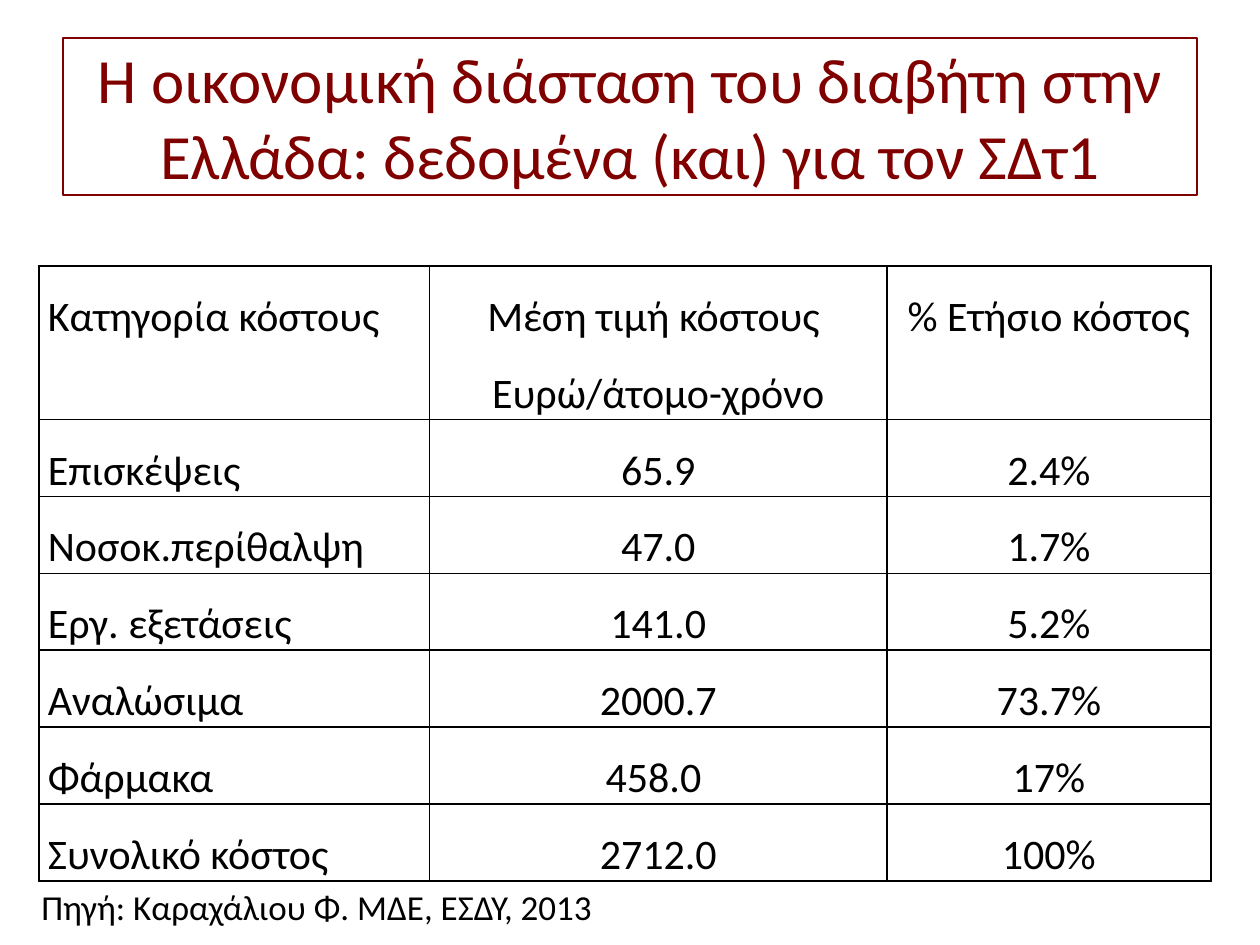
from lxml import etree
from pptx import Presentation
from pptx.dml.color import RGBColor
from pptx.enum.text import MSO_ANCHOR, PP_ALIGN
from pptx.oxml.ns import qn
from pptx.util import Inches, Pt

CENTER, JUSTIFY, LEFT = PP_ALIGN.CENTER, PP_ALIGN.JUSTIFY, PP_ALIGN.LEFT
MIDDLE, TOP = MSO_ANCHOR.MIDDLE, MSO_ANCHOR.TOP
MAROON = RGBColor(0x80, 0x00, 0x00)
BLACK = RGBColor(0x00, 0x00, 0x00)
WHITE = RGBColor(0xFF, 0xFF, 0xFF)
FONT = "Calibri"

TITLE = "Η οικονομική διάσταση του διαβήτη στην Ελλάδα: δεδομένα (και) για τον ΣΔτ1"
SOURCE = "Πηγή: Καραχάλιου Φ. ΜΔΕ, ΕΣΔΥ, 2013"
COSTS = [
    ("Κατηγορία κόστους", "Μέση τιμή κόστους \nΕυρώ/άτομο-χρόνο", "% Ετήσιο κόστος"),
    ("Επισκέψεις", "65.9", "2.4%"),
    ("Νοσοκ.περίθαλψη", "47.0", "1.7%"),
    ("Εργ. εξετάσεις", "141.0", "5.2%"),
    ("Αναλώσιμα", "2000.7", "73.7%"),
    ("Φάρμακα", "458.0 ", "17%"),
    ("Συνολικό κόστος", "2712.0", "100%"),
]
COLUMN_WIDTHS = (3.1, 3.63, 2.57)
LINE_HEIGHT = 0.61


def write(frame, text, size, color=BLACK, align=LEFT, spacing=1.0):
    frame.word_wrap = True
    frame.text = text
    for paragraph in frame.paragraphs:
        paragraph.alignment = align
        paragraph.line_spacing = spacing
        for run in paragraph.runs:
            run.font.name = FONT
            run.font.size = Pt(size)
            run.font.color.rgb = color


def set_borders(cell, color=BLACK, width=1):
    """Draw all four edges; they must come before the fill in the cell XML."""
    properties = cell._tc.get_or_add_tcPr()
    for position, edge in enumerate(("a:lnL", "a:lnR", "a:lnT", "a:lnB")):
        line = etree.Element(qn(edge), w=str(Pt(width)))
        fill = etree.SubElement(line, qn("a:solidFill"))
        etree.SubElement(fill, qn("a:srgbClr"), val=str(color))
        properties.insert(position, line)


def add_title(slide):
    title = slide.shapes.title
    title.left, title.top = Inches(0.5), Inches(0.3)
    title.width, title.height = Inches(9), Inches(1.25)
    title.line.color.rgb = MAROON
    title.line.width = Pt(1.25)
    write(title.text_frame, TITLE, 36, color=MAROON, align=CENTER)
    title.text_frame.vertical_anchor = MIDDLE


def add_cost_table(slide):
    line_counts = [max(text.count("\n") + 1 for text in row) for row in COSTS]
    table = slide.shapes.add_table(
        len(COSTS), len(COLUMN_WIDTHS), Inches(0.31), Inches(2.11),
        Inches(sum(COLUMN_WIDTHS)), Inches(LINE_HEIGHT * sum(line_counts))).table
    table.first_row = table.horz_banding = False
    for column, width in zip(table.columns, COLUMN_WIDTHS):
        column.width = Inches(width)
    for r, (row, lines) in enumerate(zip(COSTS, line_counts)):
        table.rows[r].height = Inches(LINE_HEIGHT * lines)
        for c, text in enumerate(row):
            cell = table.cell(r, c)
            cell.margin_left = cell.margin_right = Inches(0.07)
            cell.margin_top = cell.margin_bottom = 0
            cell.vertical_anchor = TOP
            cell.fill.solid()
            cell.fill.fore_color.rgb = WHITE
            set_borders(cell)
            write(cell.text_frame, text, 24, align=CENTER if c else JUSTIFY, spacing=1.5)


def add_source(slide):
    box = slide.shapes.add_textbox(Inches(0.23), Inches(6.98), Inches(6.64), Inches(0.44))
    write(box.text_frame, SOURCE, 20)


def main():
    presentation = Presentation()
    presentation.slide_width, presentation.slide_height = Inches(10), Inches(7.5)
    slide = presentation.slides.add_slide(presentation.slide_layouts[5])
    add_title(slide)
    add_cost_table(slide)
    add_source(slide)
    presentation.save("out.pptx")


if __name__ == "__main__":
    main()
